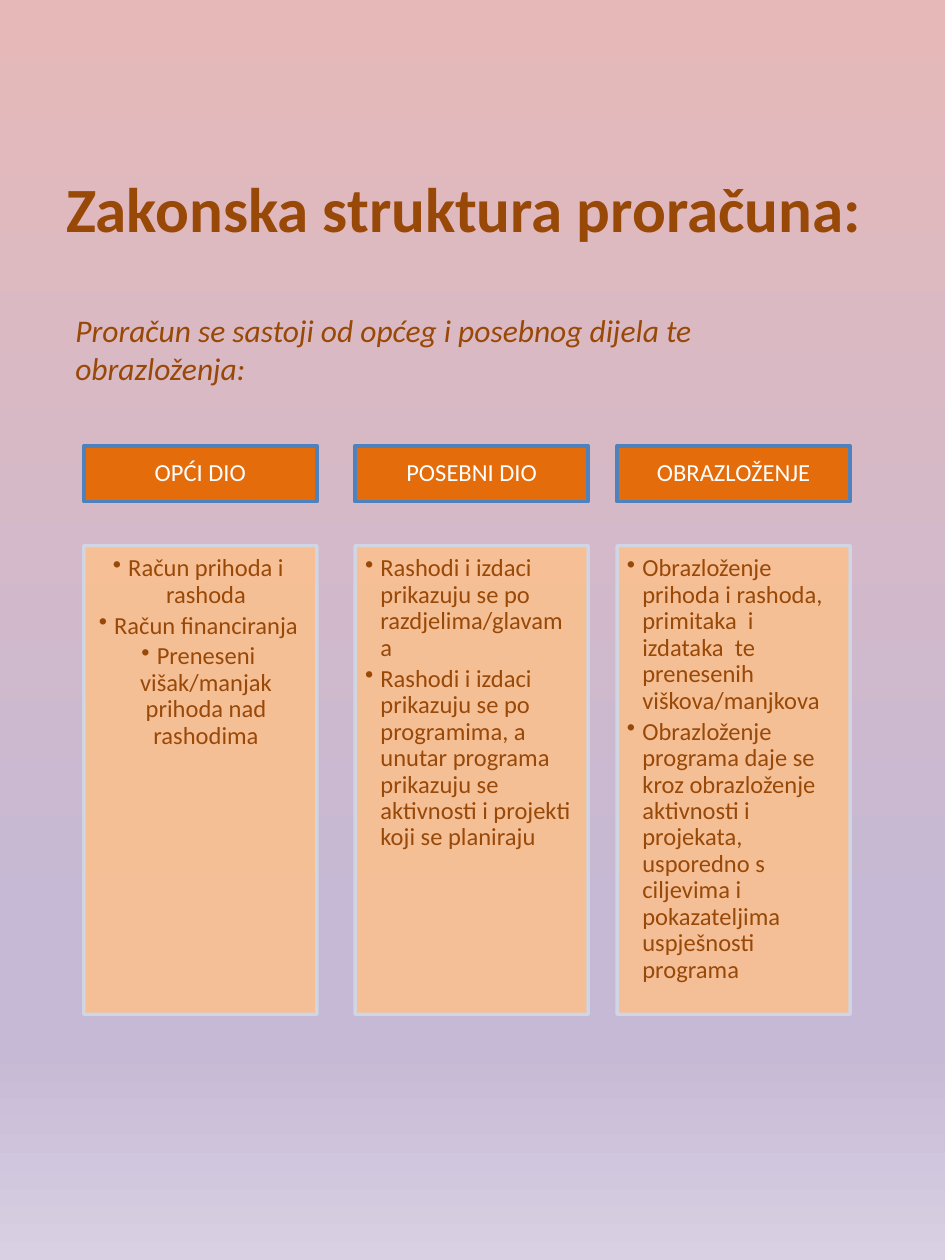
from lxml.etree import SubElement as Sub
from pptx import Presentation
from pptx.dml.color import RGBColor as Rgb
from pptx.enum.shapes import MSO_SHAPE as Shape
from pptx.enum.text import MSO_ANCHOR as Anchor, PP_ALIGN as Align
from pptx.oxml.ns import qn
from pptx.util import Cm, Pt

TITLE = "Zakonska struktura proračuna:"
INTRO = "Proračun se sastoji od općeg i posebnog dijela te obrazloženja:"
PARTS = [
    ("OPĆI DIO", Align.CENTER, [
        "Račun prihoda i rashoda",
        "Račun financiranja",
        "Preneseni višak/manjak prihoda nad rashodima",
    ]),
    ("POSEBNI DIO", Align.LEFT, [
        "Rashodi i izdaci prikazuju se po razdjelima/glavama",
        "Rashodi i izdaci prikazuju se po programima, a unutar programa "
        "prikazuju se aktivnosti i projekti koji se planiraju",
    ]),
    ("OBRAZLOŽENJE", Align.LEFT, [
        "Obrazloženje prihoda i rashoda, primitaka  i izdataka  te "
        "prenesenih viškova/manjkova",
        "Obrazloženje programa daje se kroz obrazloženje aktivnosti i "
        "projekata, usporedno s ciljevima i pokazateljima uspješnosti programa",
    ]),
]
HEX = {"brown": "984807", "white": "FFFFFF", "orange": "E46C0A",
       "blue": "4F81BD", "peach": "FAC090", "pale": "D0D8E8"}
STOPS = [(0, "E6B9B8"), (74, "C6B9D5"), (83, "C6B9D5"), (100, "D9D0E3")]
LEFTS = [1.69, 7.16, 12.44]
WIDTH = 4.7
HEAD = (8.99, 1.12)
BODY = (11, 9.45)


def write(shape, lines, size=14, color="brown", bold=False, italic=False,
          align=Align.LEFT, anchor=Anchor.TOP, inset=(0.25, 0.13, 0.25, 0.13),
          space=1.0, after=0, bullet=False):
    frame = shape.text_frame
    frame.word_wrap = True
    frame.vertical_anchor = anchor
    (frame.margin_left, frame.margin_top,
     frame.margin_right, frame.margin_bottom) = map(Cm, inset)
    frame.text = "\n".join(lines)
    for para in frame.paragraphs:
        para.alignment = align
        para.line_spacing = space
        para.space_after = Pt(after)
        font = para.runs[0].font
        font.name, font.size = "Calibri", Pt(size)
        font.bold, font.italic = bold, italic
        font.color.rgb = Rgb.from_string(HEX[color])
        if bullet:
            props = para._p.get_or_add_pPr()
            props.set("marL", str(Cm(0.31)))
            props.set("indent", str(-Cm(0.31)))
            Sub(props, qn("a:buChar"), char="•")


def panel(slide, left, span, fill, edge, alpha=100):
    top, high = span
    box = slide.shapes.add_shape(Shape.RECTANGLE, Cm(left), Cm(top),
                                 Cm(WIDTH), Cm(high))
    box.shadow.inherit = False
    box.line.width = Pt(2)
    for paint, name in ((box.fill, fill), (box.line.fill, edge)):
        paint.solid()
        paint.fore_color.rgb = Rgb.from_string(HEX[name])
    if alpha < 100:
        for tint in box._element.spPr.iter(qn("a:srgbClr")):
            Sub(tint, qn("a:alpha"), val=str(alpha * 1000))
    return box


def backdrop(slide):
    fill = slide.background.fill
    fill.gradient()
    fill.gradient_angle = 270
    stops = next(slide.element.iter(qn("a:gsLst")))
    for old in list(stops):
        stops.remove(old)
    for pos, tint in STOPS:
        stop = Sub(stops, qn("a:gs"), pos=str(pos * 1000))
        Sub(stop, qn("a:srgbClr"), val=tint)


def main():
    deck = Presentation()
    deck.slide_width, deck.slide_height = Cm(19.05), Cm(25.4)
    slide = deck.slides.add_slide(deck.slide_layouts[5])
    backdrop(slide)

    title = slide.shapes.title
    title.left, title.top = Cm(0.94), Cm(0.84)
    title.width, title.height = Cm(17.15), Cm(4.24)
    write(title, [TITLE], size=36, bold=True, align=Align.CENTER,
          anchor=Anchor.BOTTOM, inset=(0.25, 0.13, 0.58, 0.13))

    intro = slide.shapes.add_textbox(Cm(1.27), Cm(6.15), Cm(15.88), Cm(1.8))
    write(intro, [INTRO], size=18, italic=True)

    for left, (name, align, items) in zip(LEFTS, PARTS):
        head = panel(slide, left, HEAD, "orange", "blue")
        write(head, [name], color="white", align=Align.CENTER,
              anchor=Anchor.MIDDLE, inset=(0.28, 0.15, 0.28, 0.15), space=0.9)
        body = panel(slide, left, BODY, "peach", "pale", alpha=90)
        write(body, items, align=align, inset=(0.2, 0.2, 0.28, 0.3),
              space=0.9, after=2.5, bullet=True)

    deck.save("out.pptx")


if __name__ == "__main__":
    main()
